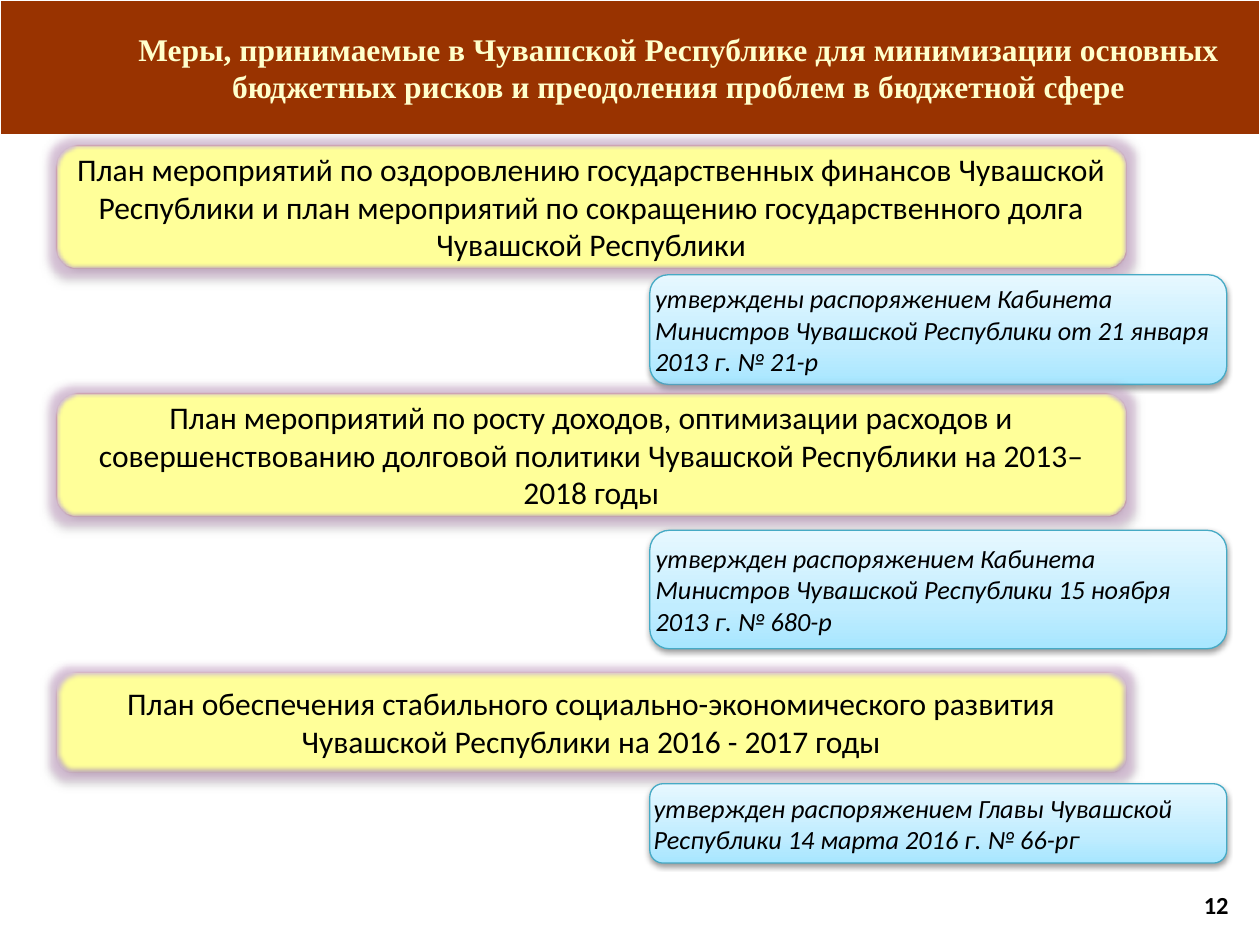
from lxml import etree
from pptx import Presentation
from pptx.dml.color import RGBColor
from pptx.enum import shapes, text
from pptx.oxml import parse_xml
from pptx.util import Cm, Pt

BROWN = RGBColor(0x99, 0x33, 0x00)
CREAM = RGBColor(0xFF, 0xFF, 0xCC)
YELLOW = RGBColor(0xFF, 0xFF, 0x99)
RED = RGBColor(0xBF, 0x4C, 0x48)
TEAL = RGBColor(0x46, 0xAA, 0xC5)
BLACK = RGBColor(0, 0, 0)
WHITE = RGBColor(0xFF, 0xFF, 0xFF)
LILAC = RGBColor(0xCC, 0x99, 0xCC)
BLUES = [(0, RGBColor(0xA7, 0xE6, 0xFF)),
         (35, RGBColor(0xC1, 0xED, 0xFF)),
         (100, RGBColor(0xE7, 0xF8, 0xFF))]

NS = 'xmlns:a="http://schemas.openxmlformats.org/drawingml/2006/main"'
SHADOW = ('<a:outerShdw blurRad="40000" dist="20000" dir="5400000" rotWithShape="0">'
          '<a:srgbClr val="000000"><a:alpha val="38000"/></a:srgbClr></a:outerShdw>')
GLOW = (f'<a:glow rad="101600"><a:srgbClr val="{LILAC}">'
        '<a:alpha val="40000"/></a:srgbClr></a:glow>')
SOFT = '<a:softEdge rad="31750"/>'

PLAN_X, PLAN_W = 1.14, 21.56
NOTE_X, NOTE_W = 13.1, 11.63

# plan text, top, height; note text, top, height (cm)
STEPS = [
    ("План мероприятий по оздоровлению государственных финансов Чувашской "
     "Республики и план мероприятий по сокращению государственного долга "
     "Чувашской Республики", 2.92, 2.49,
     "утверждены распоряжением Кабинета Министров Чувашской Республики "
     "от 21 января 2013 г. №\u00a021-р", 5.54, 2.21),
    ("План мероприятий по росту доходов, оптимизации расходов и "
     "совершенствованию долговой политики Чувашской Республики на "
     "2013–2018 годы", 7.92, 2.49,
     "утвержден распоряжением Кабинета Министров Чувашской Республики "
     "15 ноября 2013 г. № 680-р", 10.69, 2.39),
    ("План обеспечения стабильного социально-экономического развития "
     "Чувашской Республики на 2016 - 2017 годы", 13.56, 2,
     "утвержден распоряжением Главы Чувашской Республики 14 марта 2016 г. "
     "№ 66-рг", 15.8, 1.6),
]


def write(shape, words, size, align, color=BLACK, face="Calibri",
          bold=False, italic=False):
    frame = shape.text_frame
    frame.word_wrap = True
    frame.auto_size = text.MSO_AUTO_SIZE.NONE
    frame.vertical_anchor = text.MSO_ANCHOR.MIDDLE
    para = frame.paragraphs[0]
    para.alignment = align
    run = para.add_run()
    run.text = words
    font = run.font
    font.name, font.size, font.color.rgb = face, Pt(size), color
    font.bold, font.italic = bold, italic


def add_box(slide, kind, left, top, width, height, edge):
    box = slide.shapes.add_shape(kind, Cm(left), Cm(top), Cm(width), Cm(height))
    box.shadow.inherit = False
    box.line.color.rgb = edge
    box.line.width = Pt(0.75)
    return box


def add_effects(box, inner):
    """Replace the shape's empty effect list with the given effects."""
    props = box.fill._xPr
    old = props.find("{*}effectLst")
    props.replace(old, parse_xml(f"<a:effectLst {NS}>{inner}</a:effectLst>"))


def shade(box):
    """Fill with the three blues, running from the bottom upwards."""
    stops = "".join(f'<a:gs pos="{pos * 1000}"><a:srgbClr val="{color}"/></a:gs>'
                    for pos, color in BLUES)
    box.fill.background()
    props = box.fill._xPr
    props.replace(props.find("{*}noFill"), parse_xml(
        f'<a:gradFill {NS} rotWithShape="1"><a:gsLst>{stops}</a:gsLst>'
        '<a:lin ang="16200000" scaled="0"/></a:gradFill>'))


def add_title(slide, words):
    band = add_box(slide, shapes.MSO_SHAPE.RECTANGLE, 0, 0, 25.4, 2.72, WHITE)
    band.fill.solid()
    band.fill.fore_color.rgb = BROWN
    title = slide.shapes.title
    title._element.addprevious(band._element)
    title.left, title.top = Cm(2.11), Cm(0)
    title.width, title.height = Cm(23.14), Cm(2.72)
    write(title, words, 18, text.PP_ALIGN.CENTER, CREAM, "Times New Roman", bold=True)


def add_plan(slide, words, top, height):
    box = add_box(slide, shapes.MSO_SHAPE.ROUNDED_RECTANGLE,
                  PLAN_X, top, PLAN_W, height, RED)
    box.fill.solid()
    box.fill.fore_color.rgb = YELLOW
    add_effects(box, GLOW + SHADOW + SOFT)
    write(box, words, 18, text.PP_ALIGN.CENTER)


def add_note(slide, words, top, height):
    box = add_box(slide, shapes.MSO_SHAPE.ROUNDED_RECTANGLE,
                  NOTE_X, top, NOTE_W, height, TEAL)
    shade(box)
    add_effects(box, SHADOW)
    frame = box.text_frame
    frame.margin_left = frame.margin_right = 0
    frame.margin_top = frame.margin_bottom = 0
    write(box, words, 15, text.PP_ALIGN.LEFT, italic=True)


def add_number(slide, words):
    box = slide.shapes.add_textbox(Cm(22.1), Cm(17.73), Cm(2.92), Cm(1.02))
    write(box, words, 14, text.PP_ALIGN.RIGHT, bold=True)


def main():
    deck = Presentation()
    deck.slide_width, deck.slide_height = Cm(25.4), Cm(19.05)
    slide = deck.slides.add_slide(deck.slide_layouts[5])
    add_title(slide, "Меры, принимаемые в Чувашской Республике для минимизации "
                     "основных бюджетных рисков и преодоления проблем "
                     "в бюджетной сфере")
    for plan, top, height, note, low, depth in STEPS:
        add_plan(slide, plan, top, height)
        add_note(slide, note, low, depth)
    add_number(slide, "12")
    deck.save("out.pptx")


if __name__ == "__main__":
    main()
